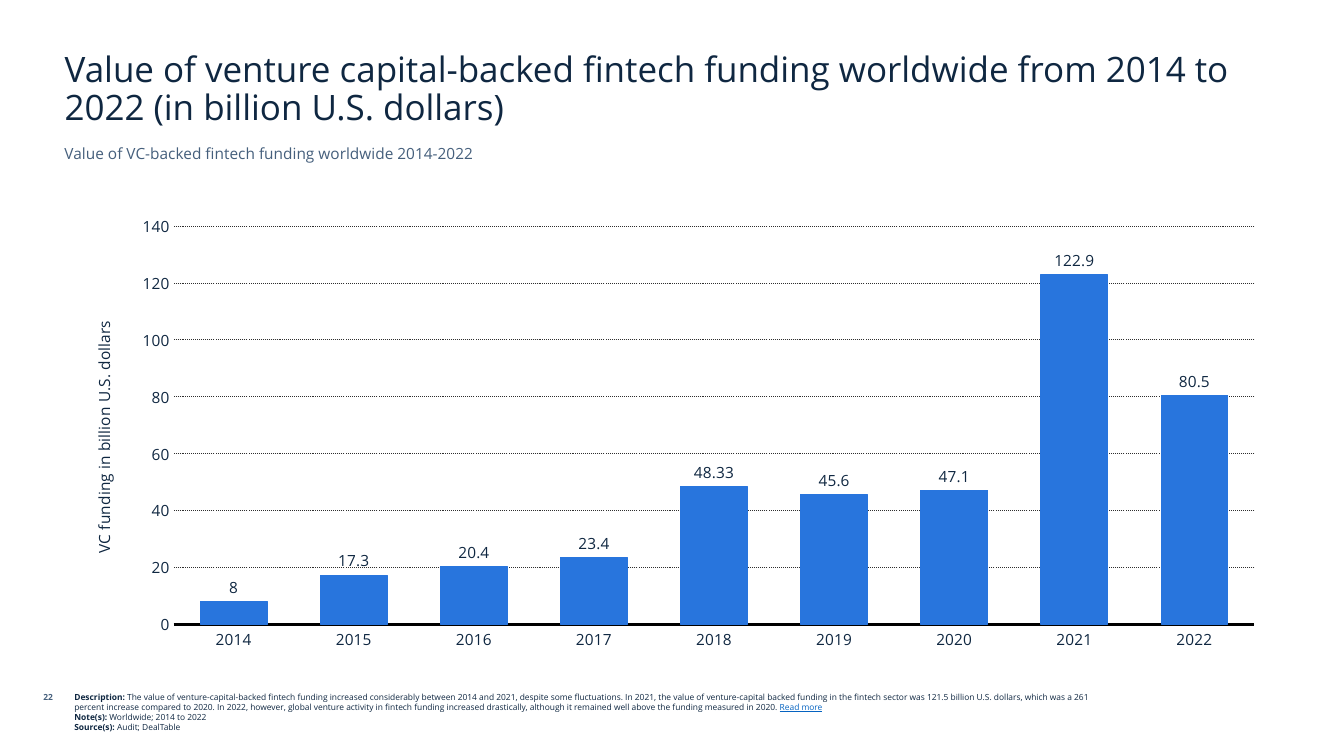
from dataclasses import dataclass

from lxml import etree
from pptx import Presentation
from pptx.chart.data import CategoryChartData
from pptx.dml.color import RGBColor
from pptx.enum.chart import XL_CHART_TYPE, XL_LABEL_POSITION, XL_TICK_MARK
from pptx.enum.dml import MSO_LINE
from pptx.enum.text import MSO_ANCHOR, MSO_AUTO_SIZE, PP_ALIGN
from pptx.oxml.ns import qn
from pptx.util import Pt

COLUMNS = XL_CHART_TYPE.COLUMN_CLUSTERED
OUTSIDE = XL_LABEL_POSITION.OUTSIDE_END
NO_TICK = XL_TICK_MARK.NONE
DOTS = MSO_LINE.ROUND_DOT
LEFT, RIGHT = PP_ALIGN.LEFT, PP_ALIGN.RIGHT
TOP, BOTTOM = MSO_ANCHOR.TOP, MSO_ANCHOR.BOTTOM


@dataclass(frozen=True)
class Theme:
    face: str = "Open Sans"
    ink: str = "0F2741"
    muted: str = "455F7C"
    link: str = "0563C1"
    bar: str = "2875DD"
    grid: str = "2F2F2F"
    axis: str = "000000"
    head: int = 25
    body: int = 11
    small: int = 6


theme = Theme()


def style(font, size, color, bold=False):
    font.name = theme.face
    font.size = Pt(size)
    font.bold = bold
    font.color.rgb = RGBColor.from_string(color)


def place(parent, index, target, **parts):
    """Give a chart part a fixed place, as shares of the chart's size."""
    for old in parent.findall(qn("c:layout")):
        parent.remove(old)
    layout = etree.Element(qn("c:layout"))
    manual = etree.SubElement(layout, qn("c:manualLayout"))
    if target:
        parts = {"layoutTarget": target, **parts}
    for name, value in parts.items():
        etree.SubElement(manual, qn("c:" + name)).set("val", str(value))
    parent.insert(index, layout)


deck = Presentation()
deck.slide_width, deck.slide_height = Pt(960), Pt(540)
slide = deck.slides.add_slide(deck.slide_layouts[5])

# Texts: box, place, alignment, anchor, paragraphs of (text, size, color, bold)
ink, small = theme.ink, theme.small
head = [[("Value of venture capital-backed fintech funding worldwide from 2014 "
          "to 2022 (in billion U.S. dollars)", theme.head, ink, False)]]
sub = [[("Value of VC-backed fintech funding worldwide 2014-2022",
         theme.body, theme.muted, False)]]
page = [[("22", small, theme.muted, True)]]
notes = [
    [("Description: ", small, ink, True),
     ("The value of venture-capital-backed fintech funding increased "
      "considerably between 2014 and 2021, despite some fluctuations. In 2021, "
      "the value of venture-capital backed funding in the fintech sector was "
      "121.5 billion U.S. dollars, which was a 261 percent increase compared "
      "to 2020. In 2022, however, global venture activity in fintech funding "
      "increased drastically, although it remained well above the funding "
      "measured in 2020. ", small, ink, False),
     ("Read more", small, theme.link, False)],
    [("Note(s): ", small, ink, True),
     ("Worldwide; 2014 to 2022", small, ink, False)],
    [("Source(s): ", small, ink, True),
     ("Audit; DealTable", small, ink, False)],
]
blocks = [
    (slide.shapes.title, (39, 33, 881, 62), LEFT, BOTTOM, head),
    (None, (39, 99.5, 881, 24.5), LEFT, TOP, sub),
    (None, (0, 490.5, 45, 21.5), RIGHT, TOP, page),
    (None, (46, 490.5, 754, 42), LEFT, TOP, notes),
]
for box, spot, align, anchor, paras in blocks:
    spot = [Pt(n) for n in spot]
    if box is None:
        box = slide.shapes.add_textbox(*spot)
    box.left, box.top, box.width, box.height = spot
    frame = box.text_frame
    frame.word_wrap = True
    frame.auto_size = MSO_AUTO_SIZE.NONE
    frame.vertical_anchor = anchor
    for i, runs in enumerate(paras):
        para = frame.add_paragraph() if i else frame.paragraphs[0]
        para.alignment = align
        if paras is head:
            para.line_spacing = 0.9
        for text, size, color, bold in runs:
            run = para.add_run()
            run.text = text
            style(run.font, size, color, bold)
            if color == theme.link:
                run.font.underline = True

# Chart
data = CategoryChartData()
data.categories = [str(year) for year in range(2014, 2023)]
data.add_series("VC funding",
                (8, 17.3, 20.4, 23.4, 48.33, 45.6, 47.1, 122.9, 80.5))
chart = slide.shapes.add_chart(
    COLUMNS, Pt(46), Pt(148.5), Pt(867.5), Pt(327), data).chart
style(chart.font, theme.body, ink)
chart.has_legend = False
chart.has_title = False

# Bars and labels
plot = chart.plots[0]
plot.gap_width, plot.overlap = 80, -30
plot.vary_by_categories = False
bars = plot.series[0]
bars.invert_if_negative = False
bars.format.fill.solid()
bars.format.fill.fore_color.rgb = RGBColor.from_string(theme.bar)
bars.format.line.color.rgb = RGBColor.from_string(theme.bar)
bars.format.line.width = Pt(0.75)
plot.has_data_labels = True
labels = plot.data_labels
labels.show_value = True
labels.position = OUTSIDE
style(labels.font, theme.body, ink)

# Axes
years, funds = chart.category_axis, chart.value_axis
for axis in (years, funds):
    axis.major_tick_mark = axis.minor_tick_mark = NO_TICK
    style(axis.tick_labels.font, theme.body, ink)
years.format.line.color.rgb = RGBColor.from_string(theme.axis)
years.format.line.width = Pt(2)
funds.format.line.fill.background()
funds.minimum_scale, funds.maximum_scale, funds.major_unit = 0, 140, 20
funds.tick_labels.number_format = "#,##0"
funds.tick_labels.number_format_is_linked = False
funds.has_major_gridlines = True
grid = funds.major_gridlines.format.line
grid.color.rgb = RGBColor.from_string(theme.grid)
grid.width = Pt(0.75)
grid.dash_style = DOTS

# Axis title, turned upright
run = funds.axis_title.text_frame.paragraphs[0].add_run()
run.text = "VC funding in billion U.S. dollars"
style(run.font, theme.body, ink)
root = chart.element if hasattr(chart, "element") else chart._chartSpace
name = root.find(".//" + qn("c:valAx") + "/" + qn("c:title"))
name.find(".//" + qn("a:bodyPr")).set("rot", "-5400000")

# Places of plot and axis title
place(name, 1, None, xMode="edge", yMode="edge", x=0.02, y=0.24)
place(root.find(".//" + qn("c:plotArea")), 0, "inner",
      xMode="edge", yMode="edge", x=0.09, y=0.04, w=0.89, h=0.87)

deck.save("out.pptx")
